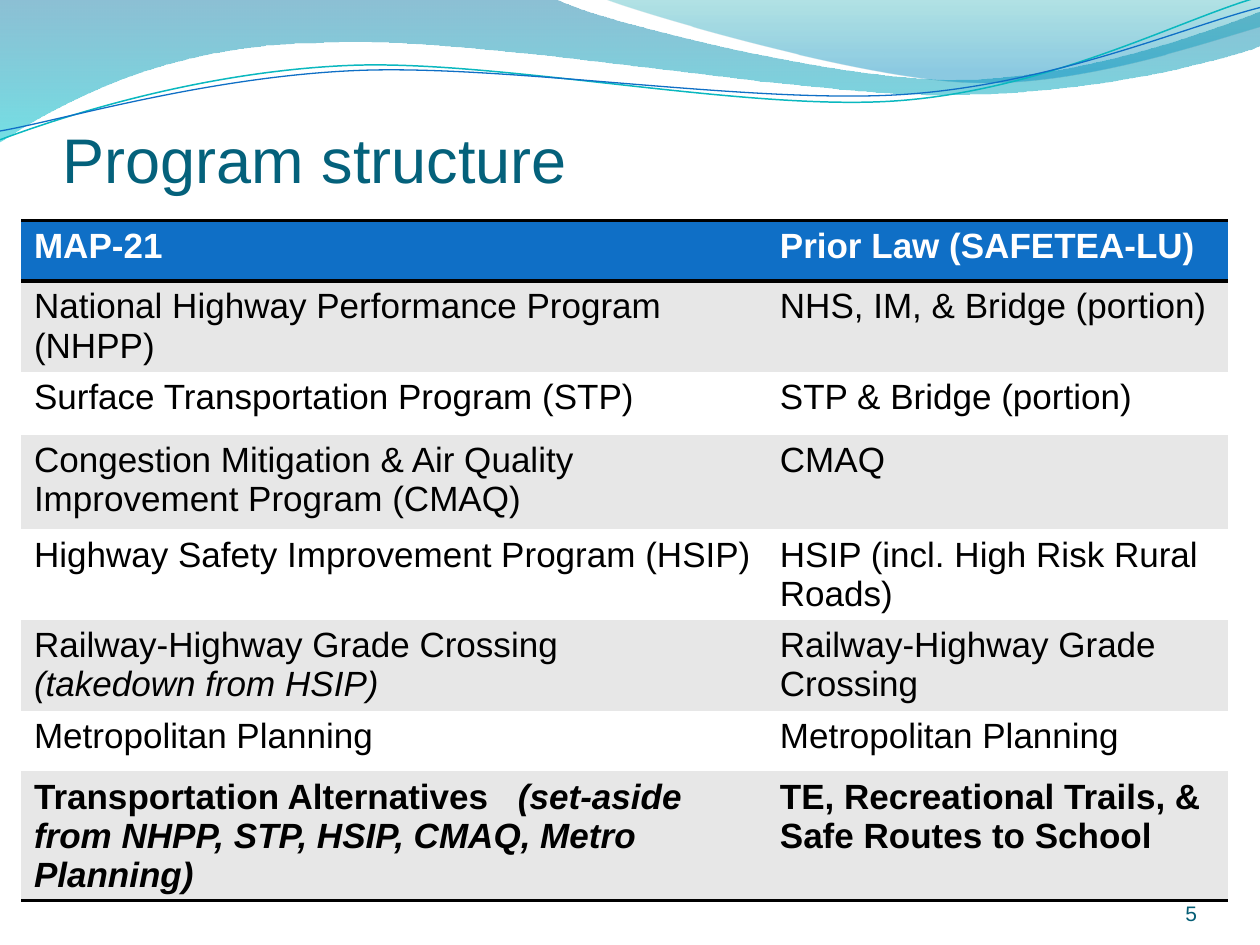
"""Build the programme structure slide with its wave banner and comparison table."""
import pptx
import pptx.dml.color
import pptx.enum.text
import pptx.oxml
import pptx.oxml.ns
import pptx.util

RGBColor = pptx.dml.color.RGBColor
ANCHOR = pptx.enum.text.MSO_ANCHOR
ALIGN = pptx.enum.text.PP_ALIGN

PX = 9144

BLACK = RGBColor(0x00, 0x00, 0x00)
WHITE = RGBColor(0xFF, 0xFF, 0xFF)
BLUE = RGBColor(0x0F, 0x6F, 0xC6)
TEAL_LINE = RGBColor(0x0A, 0xB8, 0xBF)
TITLE_TEAL = RGBColor(0x04, 0x61, 0x7B)
NUMBER_TEAL = RGBColor(0x04, 0x5D, 0x75)
BAND_GREY = RGBColor(0xE7, 0xE7, 0xE7)
WAVE_BLUE = RGBColor(0x00, 0x74, 0xA1)
WAVE_CYAN = RGBColor(0x00, 0xC6, 0xCF)
CREST_TEAL = RGBColor(0x00, 0xA1, 0xA9)
CREST_BLUE = RGBColor(0x00, 0x8B, 0xBF)

NO_TABLE_STYLE = "{2D5ABB26-0587-4C30-8999-92F81FD0307C}"

WAVE = [(0, -1), (440, -1), (476, 17, 664, 63, 758, 63), (853, 63, 958, 26, 1000, 9),
        (1001, 36), (983, 44, 870, 76, 746, 75), (622, 75, 382, 28, 257, 34),
        (129, 35, 46, 83, -1, 113)]
CREST = [(479, -1), (509, 11, 682, 62, 769, 65), (856, 69, 961, 32, 1000, 21), (1000, 0)]
TEAL_CURVE = [(0, 111), (48, 93, 158, 57, 277, 52), (395, 47, 593, 89, 713, 80),
              (833, 71, 938, 15, 998, -2)]
BLUE_CURVE = [(0, 104), (47, 96, 164, 61, 283, 56), (403, 51, 597, 83, 717, 75),
              (836, 67, 941, 21, 1000, 6)]

COLUMN_WIDTHS = [592, 366]
ROW_HEIGHTS = [48, 52, 50, 75, 70, 70, 48, 70]
TABLE_HEIGHT = 530
TABLE_LINE_SPACING = 22.3
PROGRAMS = [
    ("MAP-21", "Prior Law (SAFETEA-LU)"),
    ("National Highway Performance Program (NHPP)", "NHS, IM, & Bridge (portion)"),
    ("Surface Transportation Program (STP)", "STP & Bridge (portion)"),
    ("Congestion Mitigation & Air Quality Improvement Program (CMAQ)", "CMAQ"),
    ("Highway Safety Improvement Program (HSIP)", "HSIP (incl. High Risk Rural Roads)"),
    ([[("Railway-Highway Grade Crossing", False)], [("(takedown from HSIP)", True)]],
     "Railway-Highway Grade Crossing"),
    ("Metropolitan Planning", "Metropolitan Planning"),
    ([[("Transportation Alternatives   ", False),
       ("(set-aside from NHPP, STP, HSIP, CMAQ, Metro Planning)", True)]],
     "TE, Recreational Trails, & Safe Routes to School"),
]


def write_text(frame, text, size=20, color=BLACK, bold=False, align=ALIGN.LEFT, font="Arial",
               spacing=None):
    """Fill a frame from a string or from paragraphs of (text, italic) spans."""
    paragraphs = [[(text, False)]] if isinstance(text, str) else text
    for index, spans in enumerate(paragraphs):
        para = frame.add_paragraph() if index else frame.paragraphs[0]
        para.alignment = align
        if spacing:
            para.line_spacing = pptx.util.Pt(spacing)
        for words, italic in spans:
            span = para.add_run()
            span.text = words
            span.font.name = font
            span.font.size = pptx.util.Pt(size)
            span.font.bold = bold
            span.font.italic = italic
            span.font.color.rgb = color


def bend(shape, segments):
    """Join each three control points of a freeform into one cubic curve."""
    lines = iter(list(shape._element.iter(pptx.oxml.ns.qn("a:lnTo"))))
    for segment in segments[1:]:
        first = next(lines)
        if len(segment) == 2:
            continue
        curve = pptx.oxml.parse_xml(f'<a:cubicBezTo {pptx.oxml.ns.nsdecls("a")}/>')
        first.addprevious(curve)
        for line in (first, next(lines), next(lines)):
            curve.append(line[0])
            line.getparent().remove(line)


class SlidePainter:
    """Hold the current slide and draw each kind of element on it."""

    def __init__(self, slide):
        """Keep the slide to draw on."""
        self.slide = slide

    def outline(self, segments, closed):
        """Add a curved freeform without shadow."""
        points = [segment[i:i + 2] for segment in segments for i in range(0, len(segment), 2)]
        builder = self.slide.shapes.build_freeform(*points[0], scale=PX)
        builder.add_line_segments(points[1:], close=closed)
        shape = builder.convert_to_shape()
        bend(shape, segments)
        shape.shadow.inherit = False
        return shape

    def wave(self, segments, stops):
        """Add a closed wave with a translucent downward gradient."""
        shape = self.outline(segments, True)
        shape.line.fill.background()
        shape.fill.gradient()
        shape.fill.gradient_angle = 270
        for stop, (position, color, opacity) in zip(shape.fill.gradient_stops, stops):
            stop.position = position
            stop.color.rgb = color
        colors = shape._element.spPr.iter(pptx.oxml.ns.qn("a:srgbClr"))
        for node, (position, color, opacity) in zip(list(colors), stops):
            alpha = pptx.oxml.parse_xml(
                f'<a:alpha {pptx.oxml.ns.nsdecls("a")} val="{opacity * 1000}"/>')
            node.append(alpha)

    def curve(self, segments, color, width):
        """Add an open curved line."""
        shape = self.outline(segments, False)
        shape.fill.background()
        shape.line.color.rgb = color
        shape.line.width = pptx.util.Pt(width)

    def text(self, left, top, width, height, words, anchor=ANCHOR.TOP, inset_top=0, **style):
        """Add a wrapped text box."""
        box = self.slide.shapes.add_textbox(left * PX, top * PX, width * PX, height * PX)
        frame = box.text_frame
        frame.word_wrap = True
        frame.vertical_anchor = anchor
        frame.margin_left = frame.margin_right = frame.margin_bottom = 0
        frame.margin_top = inset_top * PX
        write_text(frame, words, **style)

    def border(self, cell, *sides):
        """Draw black borders on the named sides of a cell."""
        properties = cell._tc.get_or_add_tcPr()
        for index, side in enumerate(sides):
            properties.insert(index, pptx.oxml.parse_xml(
                f'<a:{side} {pptx.oxml.ns.nsdecls("a")} w="{pptx.util.Pt(2)}"><a:solidFill>'
                f'<a:srgbClr val="{BLACK}"/></a:solidFill></a:{side}>'))

    def table(self, left, top, rows):
        """Add the banded table with a blue header and a bold last row."""
        holder = self.slide.shapes.add_table(
            len(rows), len(COLUMN_WIDTHS), left * PX, top * PX,
            sum(COLUMN_WIDTHS) * PX, TABLE_HEIGHT * PX)
        table = holder.table
        table.horz_banding = False
        table._tbl.tblPr.find(pptx.oxml.ns.qn("a:tableStyleId")).text = NO_TABLE_STYLE
        for column, width in zip(table.columns, COLUMN_WIDTHS):
            column.width = width * PX
        last = len(rows) - 1
        for index, (row, height) in enumerate(zip(rows, ROW_HEIGHTS)):
            table.rows[index].height = height * PX
            header = index == 0
            for number, words in enumerate(row):
                cell = table.cell(index, number)
                cell.fill.solid()
                cell.fill.fore_color.rgb = BLUE if header else BAND_GREY if index % 2 else WHITE
                write_text(cell.text_frame, words, color=WHITE if header else BLACK,
                           bold=index in (0, last), spacing=TABLE_LINE_SPACING)
                if header:
                    self.border(cell, "lnT", "lnB")
                elif index == last:
                    self.border(cell, "lnB")
        holder.height = TABLE_HEIGHT * PX


def main():
    """Build and save the deck."""
    deck = pptx.Presentation()
    deck.slide_width, deck.slide_height = 1000 * PX, 750 * PX
    page = SlidePainter(deck.slides.add_slide(deck.slide_layouts[6]))
    page.wave(WAVE, [(0, WAVE_BLUE, 45), (1, WAVE_CYAN, 55)])
    page.wave(CREST, [(0, CREST_TEAL, 30), (0.8, CREST_BLUE, 45)])
    page.curve(TEAL_CURVE, TEAL_LINE, 0.85)
    page.curve(BLUE_CURVE, BLUE, 0.75)
    page.text(50, 92, 900, 83, "Program structure", inset_top=4, size=36, color=TITLE_TEAL)
    page.table(17, 175, PROGRAMS)
    page.text(867, 695, 83, 40, "5", anchor=ANCHOR.BOTTOM, size=12, color=NUMBER_TEAL,
              align=ALIGN.RIGHT)
    deck.save("out.pptx")


if __name__ == "__main__":
    main()
